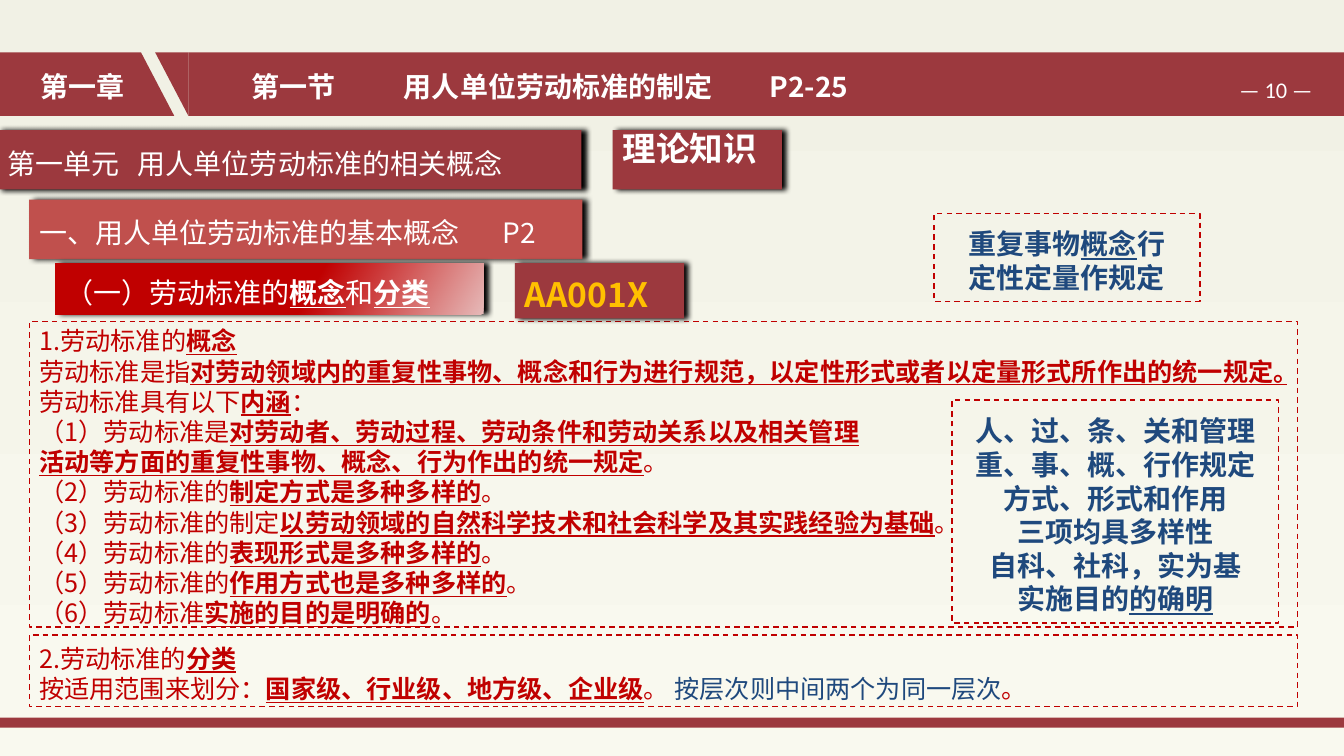
import pptx
import pptx.dml.color
import pptx.enum.dml
import pptx.enum.shapes
import pptx.enum.text
import pptx.oxml.ns
import pptx.util
from lxml import etree

PX = 9144  # EMU per px, 100 px to the inch
FONT = "Noto Sans CJK SC"
MAROON, CORAL, RED, NAVY, GOLD, WHITE = "9C393E", "C0504D", "C00000", "1F497D", "FFC000", "FFFFFF"
RECT = pptx.enum.shapes.MSO_SHAPE.RECTANGLE
TRIANGLE = pptx.enum.shapes.MSO_SHAPE.RIGHT_TRIANGLE
LEFT = pptx.enum.text.PP_ALIGN.LEFT
CENTER = pptx.enum.text.PP_ALIGN.CENTER


def px(length):
    return pptx.util.Emu(int(length * PX))


def color(hex_string):
    return pptx.dml.color.RGBColor.from_string(hex_string)


def child(parent, tag, **attributes):
    return etree.SubElement(parent, pptx.oxml.ns.qn(tag), **attributes)


def place(shape, box):
    shape.left, shape.top, shape.width, shape.height = map(px, box)


def gradient(fill, stops, angle):
    fill.gradient()
    fill.gradient_angle = angle
    for stop, (position, shade) in zip(fill.gradient_stops, stops):
        stop.position = position
        stop.color.rgb = color(shade)


def block(slide, box, fill=None, kind=RECT):
    shape = slide.shapes.add_shape(kind, *map(px, box))
    shape.shadow.inherit = False
    shape.line.fill.background()
    if fill:
        shape.fill.solid()
        shape.fill.fore_color.rgb = color(fill)
    else:
        shape.fill.background()
    return shape


def drop_shadow(shape):
    effects = shape.element.spPr.find(pptx.oxml.ns.qn("a:effectLst"))
    shadow = child(effects, "a:outerShdw", blurRad="50800", dist="38100", dir="0",
                   algn="l", rotWithShape="0")
    child(shadow, "a:srgbClr", val="000000")


def dash_outline(shape):
    shape.line.color.rgb = color(RED)
    shape.line.width = pptx.util.Pt(1)
    shape.line.dash_style = pptx.enum.dml.MSO_LINE.DASH


def write(shape, lines, size, shade, bold=None, align=LEFT, tab=None, font=FONT):
    """Fill a shape with lines; parts between bars are bold and underlined."""
    frame = shape.text_frame
    frame.word_wrap = True
    frame.auto_size = pptx.enum.text.MSO_AUTO_SIZE.NONE
    frame.vertical_anchor = pptx.enum.text.MSO_ANCHOR.MIDDLE
    frame.margin_left = frame.margin_right = px(10)
    frame.margin_top, frame.margin_bottom = px(5 + round(size * 0.3)), px(5)
    for index, line in enumerate(lines):
        paragraph = frame.add_paragraph() if index else frame.paragraphs[0]
        paragraph.alignment = align
        paragraph.line_spacing = pptx.util.Pt(size * 1.2)
        paragraph.space_before = pptx.util.Pt(0)
        paragraph.font.size = pptx.util.Pt(size)
        paragraph.font.bold = bold
        paragraph.font.color.rgb = color(shade)
        paragraph.font.name = font
        defaults = paragraph._p.pPr.find(pptx.oxml.ns.qn("a:defRPr"))
        child(defaults, "a:ea", typeface=font)
        if tab:
            stops = etree.Element(pptx.oxml.ns.qn("a:tabLst"))
            child(stops, "a:tab", pos=str(tab * PX), algn="l")
            defaults.addprevious(stops)
        for order, part in enumerate(line.split("|")):
            if part:
                run = paragraph.add_run()
                run.text = part
                if order % 2:
                    run.font.bold = run.font.underline = True
    return frame


def header(slide, box):
    left, top, width, height = box
    # Band with a slanted gap
    block(slide, (left, top, 140, height), MAROON)
    block(slide, (left + 187, top, width - 187, height), MAROON)
    block(slide, (left + 140, top, 33, height), MAROON, TRIANGLE)
    block(slide, (left + 154, top, 33, height), MAROON, TRIANGLE).rotation = 180
    # Chapter, section and page number
    for label, offset in (("第一章", 0), ("第一节", 210)):
        write(block(slide, (left + offset, top + 9, 163, 44)), [label], 20, WHITE, True, CENTER)
    page = block(slide, (left + 1213, top + 16, 107, 37))
    write(page, ["— 10 —"], 16, WHITE, align=CENTER, font="Calibri")
    # Title above the band
    title = slide.shapes.title
    page.element.addnext(title.element)
    place(title, (left + 391, top + 9, 482, 44))
    write(title, ["用人单位劳动标准的制定\tP2-25"], 20, WHITE, True, tab=363)


def headings(slide, box):
    left, top = box[:2]
    unit = block(slide, (left - 2, top, 579, 59), MAROON)
    write(unit, ["第一单元\t用人单位劳动标准的相关概念"], 20, WHITE, tab=129)
    topic = block(slide, (left + 29, top + 69, 549, 59), CORAL)
    write(topic, ["一、用人单位劳动标准的基本概念\tP2"], 20, WHITE, tab=460)
    theory = block(slide, (left + 608, top, 168, 59), MAROON)
    write(theory, ["理论知识"], 24, WHITE, True).margin_bottom = px(35)
    subtopic = block(slide, (left + 55, top + 132, 425, 51), RED)
    gradient(subtopic.fill, [(0, "E6B9B8"), (0.41, RED)], 150)
    write(subtopic, ["（一）劳动标准的|概念|和|分类"], 20, WHITE)
    code = block(slide, (left + 511, top + 132, 168, 55), MAROON)
    write(code, ["AA001X"], 24, GOLD, True)
    for tag in (unit, topic, theory, subtopic, code):
        drop_shadow(tag)


def concept(slide, box):
    body = slide.placeholders[1]
    place(body, box)
    dash_outline(body)
    frame = write(body, [
        "1.劳动标准的|概念",
        "劳动标准是指|对劳动领域内的重复性事物、概念和行为进行规范，以定性形式或者以定量形式所作出的统一规定。",
        "劳动标准具有以下|内涵|：",
        "（1）劳动标准是|对劳动者、劳动过程、劳动条件和劳动关系以及相关管理",
        "|活动等方面的重复性事物、概念、行为作出的统一规定|。",
        "（2）劳动标准的|制定方式是多种多样的|。",
        "（3）劳动标准的制定|以劳动领域的自然科学技术和社会科学及其实践经验为基础|。",
        "（4）劳动标准的|表现形式是多种多样的|。",
        "（5）劳动标准的|作用方式也是多种多样的|。",
        "（6）劳动标准|实施的目的是明确的|。",
    ], 18, RED)
    for paragraph in frame.paragraphs:
        properties = paragraph._p.pPr
        properties.set("marL", "0")
        properties.set("indent", "0")
        defaults = properties.find(pptx.oxml.ns.qn("a:defRPr"))
        defaults.addprevious(etree.Element(pptx.oxml.ns.qn("a:buNone")))


def classification(slide, box):
    classes = block(slide, box)
    dash_outline(classes)
    frame = write(classes, ["2.劳动标准的|分类",
                            "按适用范围来划分：|国家级、行业级、地方级、企业级|。 "], 18, RED)
    for text, shade in (("按层次则中间两个为同一层次", NAVY), ("。", RED)):
        run = frame.paragraphs[1].add_run()
        run.text = text
        run.font.color.rgb = color(shade)


def mnemonic(slide, box, lines):
    rhyme = block(slide, box)
    dash_outline(rhyme)
    write(rhyme, lines, 20, NAVY, True, CENTER)


def main():
    deck = pptx.Presentation()
    deck.slide_width, deck.slide_height = px(1334), px(750)
    slide = deck.slides.add_slide(deck.slide_layouts[1])
    gradient(slide.background.fill, [(0, "F1F1E5"), (1, "F9F9EF")], 270)
    block(slide, (0, 712, 1334, 10), MAROON)  # footer bar
    header(slide, (0, 52, 1334, 63))
    headings(slide, (0, 129, 776, 187))
    concept(slide, (29, 319, 1259, 303))
    classification(slide, (29, 630, 1259, 71))
    mnemonic(slide, (945, 397, 324, 221), [
        "人、过、条、关和管理", "重、事、概、行作规定", "方式、形式和作用",
        "三项均具多样性", "自科、社科，实为基", "实施目的|的确明"])
    mnemonic(slide, (927, 212, 264, 87), ["重复事物|概念|行", "定性定量作规定"])
    deck.save("out.pptx")


if __name__ == "__main__":
    main()
